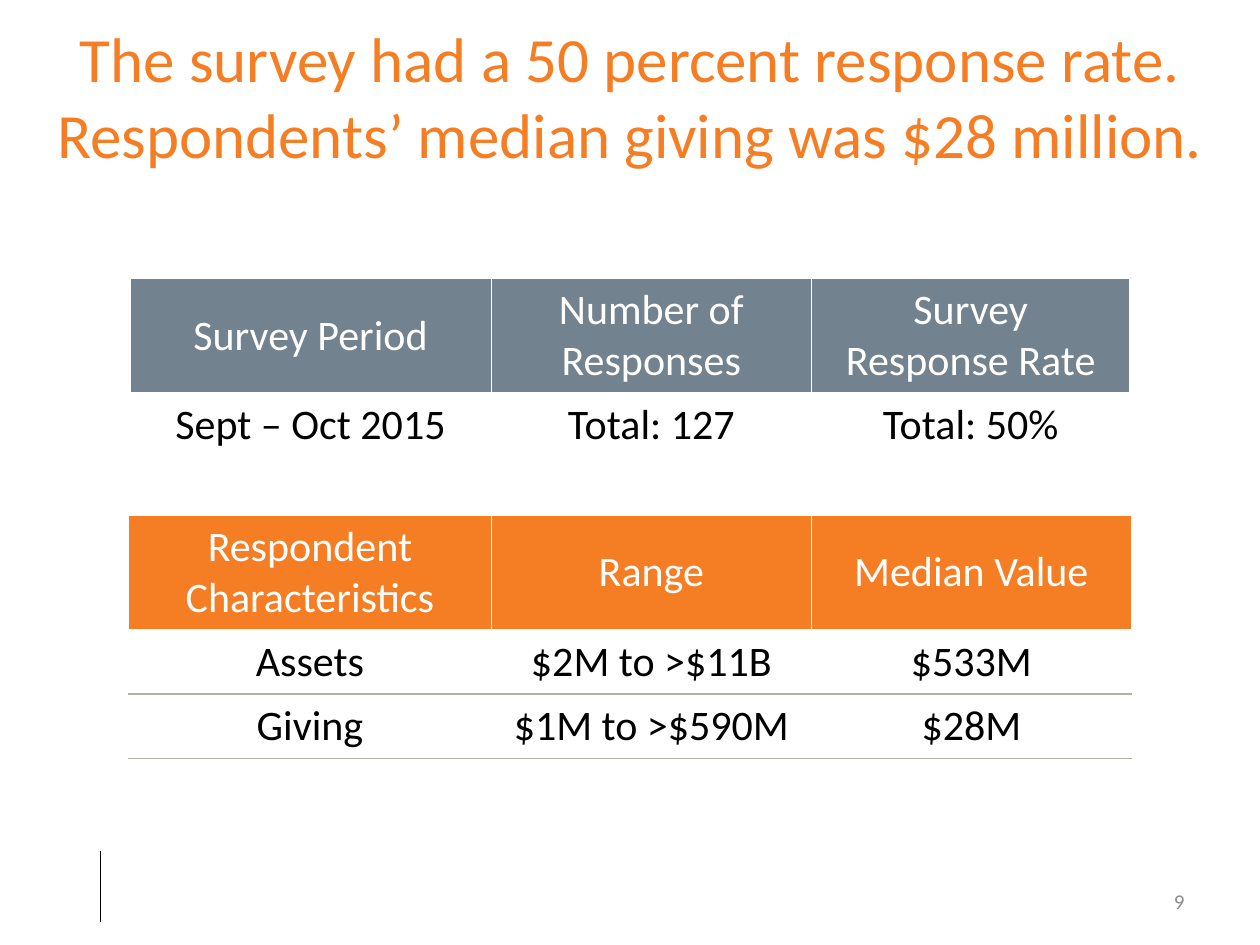
"""Build the survey response slide with its two summary tables."""
from dataclasses import dataclass

import pptx
import pptx.dml.color
import pptx.enum.shapes
import pptx.enum.text
import pptx.oxml.ns
import pptx.util
from lxml import etree

Inches = pptx.util.Inches
Align = pptx.enum.text.PP_ALIGN
MIDDLE = pptx.enum.text.MSO_ANCHOR.MIDDLE
ORANGE, SLATE, STONE = "F57E25", "72828E", "B3B0A5"
WHITE, BLACK, GRAY = "FFFFFF", "000000", "8C8C8C"
HEADER_HEIGHT, BODY_HEIGHT = 0.91, 0.51
CELL_FORMAT = {
    "vertical_anchor": MIDDLE,
    "margin_left": Inches(0.05),
    "margin_right": Inches(0.05),
    "margin_top": Inches(0.05),
    "margin_bottom": Inches(0.05),
}


@dataclass(frozen=True)
class Label:
    text: str
    left: float
    top: float
    width: float
    height: float
    size: int
    color: str
    align: Align


@dataclass(frozen=True)
class Summary:
    left: float
    top: float
    widths: tuple[float, ...]
    header_color: str
    rule_color: str
    rows: tuple[tuple[str, ...], ...]


LABELS = (
    Label("The survey had a 50 percent response rate.\v"
          "Respondents’ median giving was $28 million.",
          0, 0.18, 10, 1.15, 36, ORANGE, Align.CENTER),
    Label("9", 7.17, 6.95, 2.33, 0.4, 12, GRAY, Align.RIGHT),
)
SUMMARIES = (
    Summary(1.03, 2.21, (2.87, 2.54, 2.53), SLATE, WHITE, (
        ("Survey Period", "Number of Responses", "Survey\nResponse Rate"),
        ("Sept – Oct 2015", "Total: 127", "Total: 50%"),
    )),
    Summary(1.02, 4.09, (2.88, 2.54, 2.54), ORANGE, STONE, (
        ("Respondent\nCharacteristics", "Range", "Median Value"),
        ("Assets", "$2M to >$11B", "$533M"),
        ("Giving", "$1M to >$590M", "$28M"),
    )),
)


def rgb(value: str) -> pptx.dml.color.RGBColor:
    return pptx.dml.color.RGBColor.from_string(value)


def apply_format(target, values: dict) -> None:
    for name, value in values.items():
        setattr(target, name, value)


def write(frame, text: str, size: int, color: str, align: Align) -> None:
    frame.text = text
    for para in frame.paragraphs:
        para.alignment = align
        for span in para.runs:
            apply_format(span.font, {"name": "Calibri", "size": pptx.util.Pt(size)})
            span.font.color.rgb = rgb(color)


def add_label(page, label: Label) -> None:
    box = page.shapes.add_textbox(Inches(label.left), Inches(label.top),
                                  Inches(label.width), Inches(label.height))
    apply_format(box.text_frame, {"word_wrap": True, "vertical_anchor": MIDDLE})
    write(box.text_frame, label.text, label.size, label.color, label.align)


def set_borders(cell, colors: dict[str, str]) -> None:
    properties = cell._tc.get_or_add_tcPr()
    for position, (side, color) in enumerate(colors.items()):
        border = etree.Element(pptx.oxml.ns.qn(f"a:ln{side}"), w=str(pptx.util.Pt(1)))
        fill = etree.SubElement(border, pptx.oxml.ns.qn("a:solidFill"))
        etree.SubElement(fill, pptx.oxml.ns.qn("a:srgbClr"), val=color)
        properties.insert(position, border)


def add_summary(page, summary: Summary) -> None:
    heights = [HEADER_HEIGHT] + [BODY_HEIGHT] * (len(summary.rows) - 1)
    table = page.shapes.add_table(
        len(heights), len(summary.widths), Inches(summary.left), Inches(summary.top),
        Inches(sum(summary.widths)), Inches(sum(heights))).table
    apply_format(table, {"first_row": False, "horz_banding": False})
    for column, width in zip(table.columns, summary.widths):
        column.width = Inches(width)
    for index, (row, height, texts) in enumerate(zip(table.rows, heights, summary.rows)):
        row.height = Inches(height)
        for cell, text in zip(row.cells, texts):
            apply_format(cell, CELL_FORMAT)
            write(cell.text_frame, text, 24, BLACK if index else WHITE, Align.CENTER)
            if index:
                cell.fill.background()
            else:
                cell.fill.solid()
                cell.fill.fore_color.rgb = rgb(summary.header_color)
            set_borders(cell, {
                "L": WHITE,
                "R": WHITE,
                "T": summary.rule_color if index > 1 else WHITE,
                "B": summary.rule_color if index else WHITE,
            })


def add_footer_rule(page) -> None:
    rule = page.shapes.add_connector(pptx.enum.shapes.MSO_CONNECTOR.STRAIGHT,
                                     Inches(0.8), Inches(6.75), Inches(0.8), Inches(7.32))
    rule.line.color.rgb = rgb(BLACK)
    rule.line.width = pptx.util.Pt(0.5)
    etree.SubElement(rule._element.spPr, pptx.oxml.ns.qn("a:effectLst"))


def main() -> None:
    deck = pptx.Presentation()
    apply_format(deck, {"slide_width": Inches(10), "slide_height": Inches(7.5)})
    page = deck.slides.add_slide(deck.slide_layouts[6])
    add_footer_rule(page)
    for label in LABELS:
        add_label(page, label)
    for summary in SUMMARIES:
        add_summary(page, summary)
    deck.save("out.pptx")


if __name__ == "__main__":
    main()
